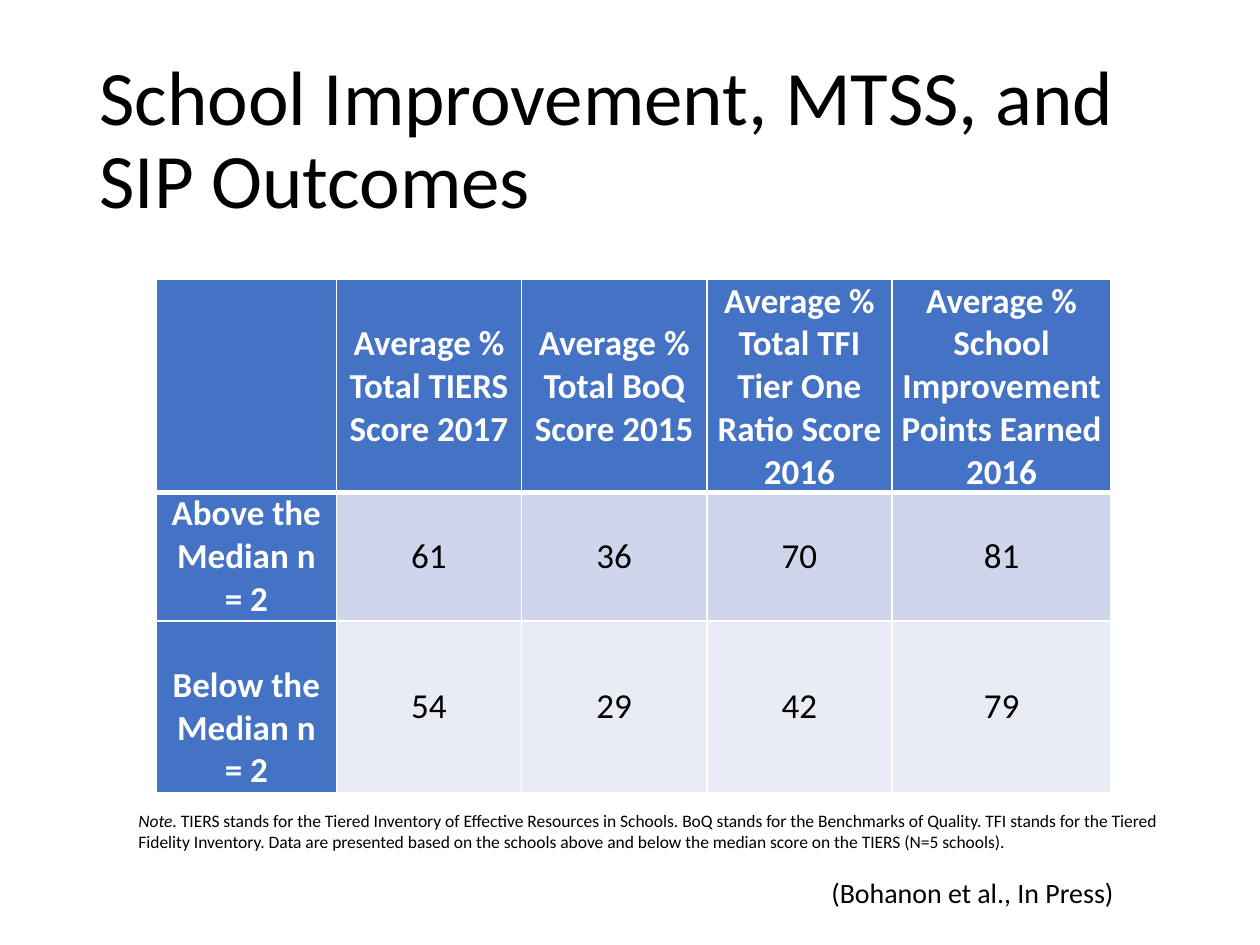
from lxml.etree import SubElement as Sub
from pptx import Presentation
from pptx.dml.color import RGBColor
from pptx.enum.text import MSO_ANCHOR as Anchor, PP_ALIGN as Align
from pptx.oxml.ns import qn
from pptx.util import Inches, Pt

BLACK = RGBColor(0x00, 0x00, 0x00)
WHITE = RGBColor(0xFF, 0xFF, 0xFF)
BLUE = RGBColor(0x44, 0x72, 0xC4)
BANDS = [RGBColor(0xCF, 0xD5, 0xEA), RGBColor(0xE9, 0xEB, 0xF5)]

COLS = [1.43, 1.47, 1.47, 1.47, 1.74]
ROWS = [1.69, 1.02, 1.36]
DATA = [
    ["", "Average % Total TIERS Score 2017", "Average % Total BoQ Score 2015",
     "Average % Total TFI Tier One Ratio Score 2016",
     "Average % School Improvement Points Earned 2016"],
    ["Above the Median n = 2", "61", "36", "70", "81"],
    ["Below the Median n = 2", "54", "29", "42", "79"],
]
NOTE = ("TIERS stands for the Tiered Inventory of Effective Resources in Schools. "
        "BoQ stands for the Benchmarks of Quality. TFI stands for the Tiered "
        "Fidelity Inventory. Data are presented based on the schools above and "
        "below the median score on the TIERS (N=5 schools).")


def write(para, text, size, color=BLACK, bold=False, italic=False, align=Align.LEFT):
    para.alignment = align
    run = para.add_run()
    run.text = text
    font = run.font
    font.name, font.size = "Calibri", Pt(size)
    font.bold, font.italic = bold, italic
    font.color.rgb = color


def add_box(slide, box, anchor=Anchor.TOP, wrap=True):
    frame = slide.shapes.add_textbox(*map(Inches, box)).text_frame
    frame.word_wrap = wrap
    frame.vertical_anchor = anchor
    return frame.paragraphs[0]


def add_title(slide, box):
    para = add_box(slide, box, Anchor.MIDDLE)
    para.line_spacing = 0.9
    write(para, "School Improvement, MTSS, and SIP Outcomes", 44)


def add_edges(cell, row):
    widths = {"L": 1, "R": 1, "T": 3 if row == 1 else 1, "B": 3 if row == 0 else 1}
    for side, width in widths.items():
        line = Sub(cell._tc.get_or_add_tcPr(), qn(f"a:ln{side}"), w=str(Pt(width)))
        Sub(Sub(line, qn("a:solidFill")), qn("a:srgbClr"), val=str(WHITE))


def add_scores(slide, box):
    table = slide.shapes.add_table(len(ROWS), len(COLS), *map(Inches, box)).table
    table.first_col = True
    for col, width in zip(table.columns, COLS):
        col.width = Inches(width)
    for row, height in zip(table.rows, ROWS):
        row.height = Inches(height)
    for r, texts in enumerate(DATA):
        for c, text in enumerate(texts):
            cell = table.cell(r, c)
            head = r == 0 or c == 0
            cell.margin_left = cell.margin_right = Inches(0.07)
            cell.margin_top = cell.margin_bottom = 0
            cell.vertical_anchor = Anchor.BOTTOM if r and c == 0 else Anchor.MIDDLE
            add_edges(cell, r)
            cell.fill.solid()
            cell.fill.fore_color.rgb = BLUE if head else BANDS[r - 1]
            if text:
                write(cell.text_frame.paragraphs[0], text, 20,
                      color=WHITE if head else BLACK, bold=head, align=Align.CENTER)


def add_note(slide, box):
    para = add_box(slide, box)
    write(para, "Note. ", 10, italic=True)
    write(para, NOTE, 10)


def add_credit(slide, box):
    write(add_box(slide, box, wrap=False), "(Bohanon et al., In Press)", 16)


def main():
    deck = Presentation()
    deck.slide_width, deck.slide_height = Inches(10), Inches(7.5)
    slide = deck.slides.add_slide(deck.slide_layouts[6])
    add_title(slide, (0.69, 0.4, 8.62, 1.45))
    add_scores(slide, (1.24, 2.22, sum(COLS), sum(ROWS)))
    add_note(slide, (1, 6.38, 8.32, 0.44))
    add_credit(slide, (6.5, 6.9, 2.47, 0.37))
    deck.save("out.pptx")


if __name__ == "__main__":
    main()
